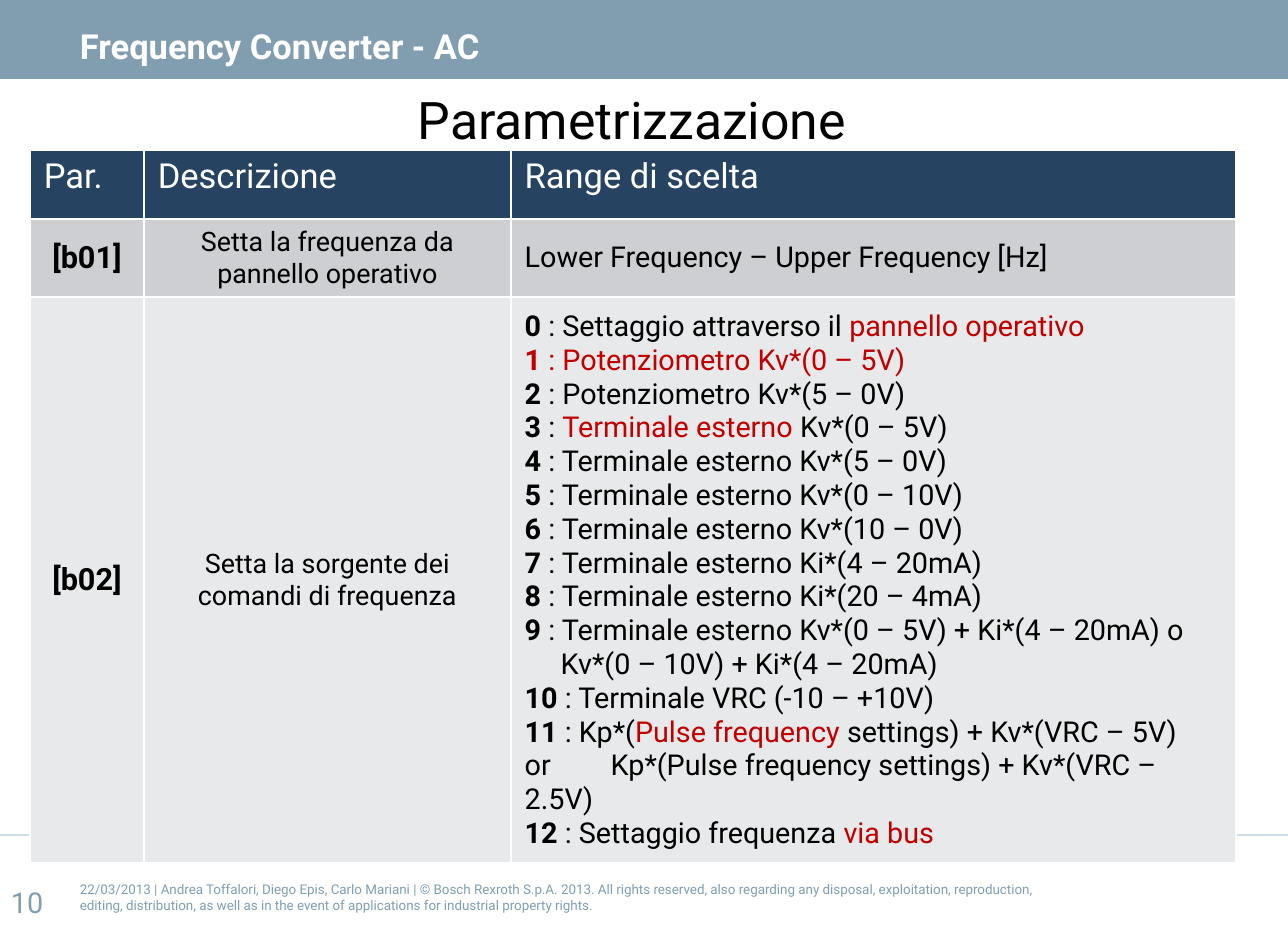
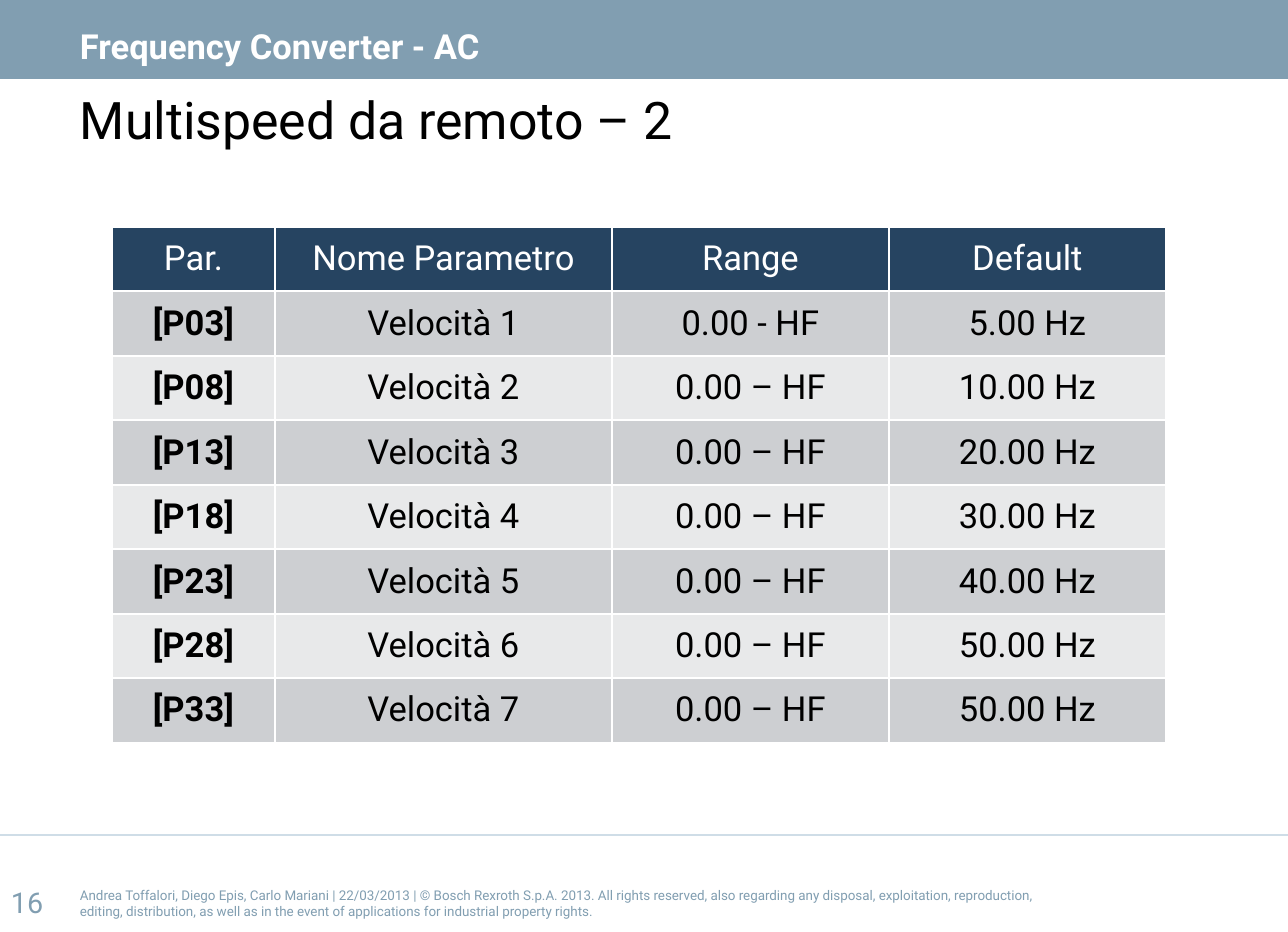
from lxml.etree import SubElement
from pptx import Presentation
from pptx.dml.color import RGBColor
from pptx.enum.shapes import MSO_CONNECTOR as Connector, MSO_SHAPE as Shape
from pptx.enum.text import MSO_ANCHOR as Anchor, PP_ALIGN as Align
from pptx.oxml.ns import qn
from pptx.util import Pt

EMU_PER_PX = 914400 / 138
WIDTH, HEIGHT = 1288, 932
TEXT_LEFT = 80

# Palette
STEEL, NAVY, RULE = "819EB1", "264461", "CFDDE7"
DARK_ROW, LIGHT_ROW = "CDCFD2", "E8E9EA"
WHITE, BLACK, RED = "FFFFFF", "000000", "C00000"

AUTHORS = "Andrea Toffalori, Diego Epis, Carlo Mariani"
DATE = "22/03/2013"
RIGHTS = ("© Bosch Rexroth S.p.A. 2013. All rights reserved, also regarding any "
          "disposal, exploitation, reproduction, editing, distribution, as well as "
          "in the event of applications for industrial property rights.")


def px(length):
    return round(length * EMU_PER_PX)


def colour(value):
    return RGBColor.from_string(value)


class Deck:
    font = "Roboto"

    def __init__(self):
        self.deck = Presentation()
        self.deck.slide_width, self.deck.slide_height = px(WIDTH), px(HEIGHT)
        self.page = None

    # Basic elements
    def span(self, para, text, size, ink=BLACK, bold=False):
        span = para.add_run()
        span.text = text
        span.font.name, span.font.size, span.font.bold = self.font, Pt(size), bold
        span.font.color.rgb = colour(ink)

    def text(self, left, top, width, height, words, size, ink, bold=False,
             anchor=Anchor.TOP, align=Align.LEFT, inset=0, spacing=None, wrap=True):
        box = self.page.shapes.add_textbox(px(left), px(top), px(width), px(height))
        frame = box.text_frame
        frame.word_wrap, frame.vertical_anchor = wrap, anchor
        frame.margin_left = frame.margin_right = frame.margin_bottom = 0
        frame.margin_top = px(inset)
        para = frame.paragraphs[0]
        para.alignment, para.line_spacing = align, spacing
        self.span(para, words, size, ink, bold)

    def rule(self, top, ink):
        line = self.page.shapes.add_connector(
            Connector.STRAIGHT, 0, px(top), px(WIDTH), px(top))
        line.line.color.rgb, line.line.width = colour(ink), Pt(1)
        SubElement(line._element.spPr, qn("a:effectLst"))

    # Frame shared by the slides
    def start(self, title, number, footer, align=Align.LEFT, footer_anchor=Anchor.BOTTOM):
        self.page = self.deck.slides.add_slide(self.deck.slide_layouts[6])
        band = self.page.shapes.add_shape(Shape.RECTANGLE, 0, 0, px(WIDTH), px(80))
        band.shadow.inherit = False
        band.fill.solid()
        band.fill.fore_color.rgb = colour(STEEL)
        band.line.fill.background()
        self.rule(80, WHITE)
        self.rule(835, RULE)
        self.text(11, 885, 58, 29, str(number), 15, STEEL, wrap=False)
        self.text(TEXT_LEFT, 875, 966, 44, footer, 7, STEEL, anchor=footer_anchor)
        self.text(TEXT_LEFT, 0, 1104, 79, "Frequency Converter - AC", 18, WHITE,
                  bold=True, anchor=Anchor.MIDDLE, inset=8, spacing=1.11)
        self.text(TEXT_LEFT, 80, 1104, 80, title, 27, BLACK, align=align,
                  inset=1, spacing=1.11)

    # Tables
    def table(self, left, top, columns, rows):
        frame = self.page.shapes.add_table(
            len(rows), len(columns), px(left), px(top), px(sum(columns)), px(sum(rows)))
        table = frame.table
        for column, width in zip(table.columns, columns):
            column.width = px(width)
        for index, height in enumerate(rows):
            table.rows[index].height = px(height)
            fill = (DARK_ROW if index % 2 else LIGHT_ROW) if index else NAVY
            for cell in table.rows[index].cells:
                self.style_cell(cell, fill)
        return table

    def style_cell(self, cell, fill):
        properties = cell._tc.get_or_add_tcPr()
        for side in ("lnL", "lnR", "lnT", "lnB"):
            border = SubElement(properties, qn(f"a:{side}"), w=str(Pt(1)))
            SubElement(SubElement(border, qn("a:solidFill")), qn("a:srgbClr"), val=WHITE)
        cell.fill.solid()
        cell.fill.fore_color.rgb = colour(fill)

    def cell(self, cell, words, size, ink=BLACK, bold=False,
             align=Align.CENTER, anchor=Anchor.MIDDLE):
        cell.vertical_anchor = anchor
        para = cell.text_frame.paragraphs[0]
        para.alignment = align
        self.span(para, words, size, ink, bold)

    def options(self, cell, options, size, indent, tab):
        """Numbered choices; an option without a number continues the one above."""
        cell.vertical_anchor = Anchor.MIDDLE
        frame = cell.text_frame
        for index, (number, spans) in enumerate(options):
            para = frame.add_paragraph() if index else frame.paragraphs[0]
            properties = para._p.get_or_add_pPr()
            if number:
                self.span(para, f"{number} ", size, spans[0][1], bold=True)
            else:
                properties.set("marL", str(px(indent)))
            for words, ink in spans:
                if "\t" in words:
                    stops = SubElement(properties, qn("a:tabLst"))
                    SubElement(stops, qn("a:tab"), pos=str(px(tab)), algn="l")
                    para.add_line_break()
                self.span(para, words, size, ink)


def parameter_slide(deck):
    deck.start("Parametrizzazione", 10, f"{DATE} | {AUTHORS} | {RIGHTS}",
               align=Align.CENTER, footer_anchor=Anchor.MIDDLE)
    table = deck.table(30, 150, [114, 367, 725], [69, 78, 554])
    for column, heading in enumerate(["Par.", "Descrizione", "Range di scelta"]):
        deck.cell(table.cell(0, column), heading, 18, WHITE,
                  align=Align.LEFT, anchor=Anchor.TOP)
    parameters = [("[b01]", "Setta la frequenza da pannello operativo"),
                  ("[b02]", "Setta la sorgente dei comandi di frequenza")]
    for row, (code, description) in enumerate(parameters, 1):
        deck.cell(table.cell(row, 0), code, 16, bold=True)
        deck.cell(table.cell(row, 1), description, 14)
    deck.cell(table.cell(1, 2), "Lower Frequency – Upper Frequency [Hz]", 15,
              align=Align.LEFT)

    # Frequency sources of [b02]
    terminals = ["Kv*(5 – 0V)", "Kv*(0 – 10V)", "Kv*(10 – 0V)", "Ki*(4 – 20mA)",
                 "Ki*(20 – 4mA)", "Kv*(0 – 5V) + Ki*(4 – 20mA) o"]
    sources = [
        (0, [(": Settaggio attraverso il ", BLACK), ("pannello operativo", RED)]),
        (1, [(": Potenziometro Kv*(0 – 5V)", RED)]),
        (2, [(": Potenziometro Kv*(5 – 0V)", BLACK)]),
        (3, [(": ", BLACK), ("Terminale esterno ", RED), ("Kv*(0 – 5V)", BLACK)]),
        *[(number, [(f": Terminale esterno {signal}", BLACK)])
          for number, signal in enumerate(terminals, 4)],
        (None, [("Kv*(0 – 10V) + Ki*(4 – 20mA)", BLACK)]),
        (10, [(": Terminale VRC (-10 – +10V)", BLACK)]),
        (11, [(": Kp*(", BLACK), ("Pulse frequency ", RED),
              ("settings) + Kv*(VRC – 5V)", BLACK),
              ("or\tKp*(Pulse frequency settings) + Kv*(VRC – 2.5V)", BLACK)]),
        (12, [(": Settaggio frequenza ", BLACK), ("via bus", RED)]),
    ]
    # Zero is a real option number, so numbers are passed on as text
    labelled = [("" if number is None else str(number), spans)
                for number, spans in sources]
    deck.options(table.cell(2, 2), labelled, 15, indent=36, tab=86)


def multispeed_slide(deck):
    deck.start("Multispeed da remoto – 2", 16, f"{AUTHORS} | {DATE} | {RIGHTS}")
    table = deck.table(112, 227, [163, 337, 277, 277], [64, 65] * 4)
    for column, heading in enumerate(["Par.", "Nome Parametro", "Range", "Default"]):
        deck.cell(table.cell(0, column), heading, 18, WHITE)
    for row, default in enumerate([5, 10, 20, 30, 40, 50, 50], 1):
        dash = "-" if row == 1 else "–"
        values = [f"[P{5 * row - 2:02}]", f"Velocità {row}",
                  f"0.00 {dash} HF", f"{default:.2f} Hz"]
        for column, value in enumerate(values):
            deck.cell(table.cell(row, column), value, 18, bold=column == 0)


def main():
    deck = Deck()
    parameter_slide(deck)
    multispeed_slide(deck)
    deck.deck.save("out.pptx")


if __name__ == "__main__":
    main()
